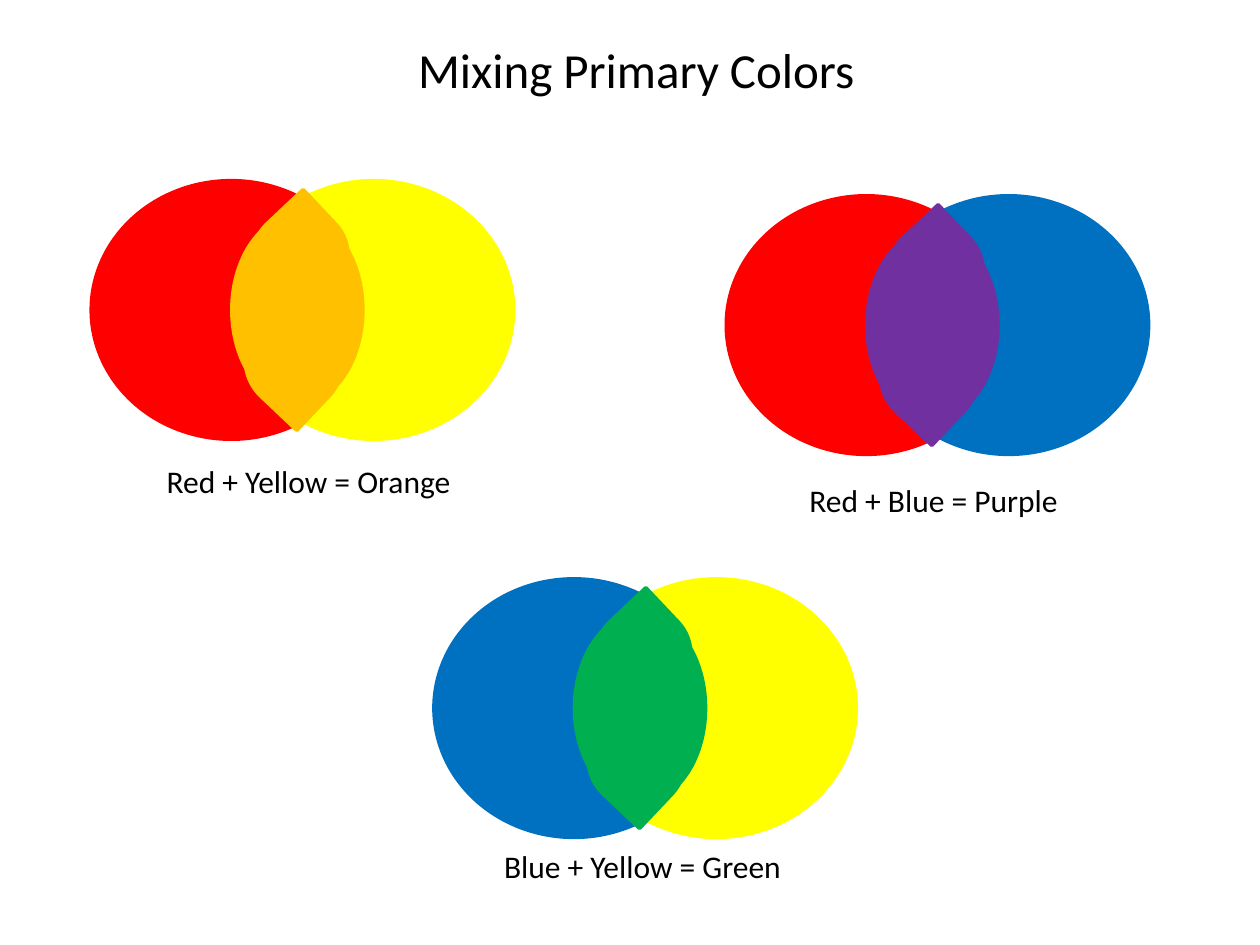
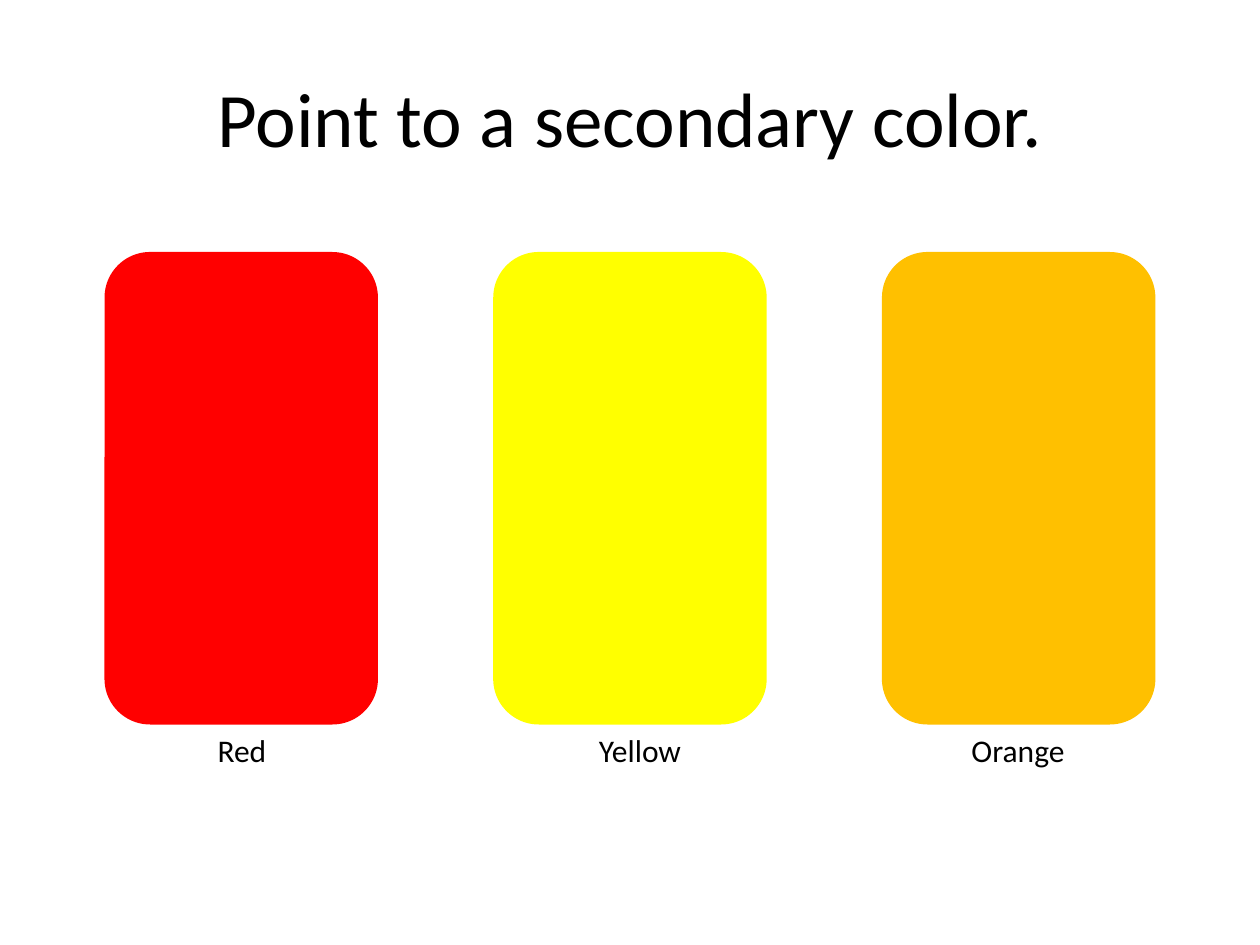
from pptx import Presentation
from pptx.dml.color import RGBColor
from pptx.enum.shapes import MSO_SHAPE
from pptx.enum.text import MSO_ANCHOR, MSO_AUTO_SIZE, PP_ALIGN
from pptx.util import Inches, Pt

FONT = "Calibri"
COLORS = {
    "Red": "FF0000",
    "Yellow": "FFFF00",
    "Blue": "0070C0",
    "Orange": "FFC000",
    "Purple": "7030A0",
    "Green": "00B050",
    "text": "000000",
}

MIX_TITLE = ("Mixing Primary Colors", (0.55, -0.08, 9, 1.25), 28)
MIXES = [
    {"colors": ("Red", "Yellow", "Orange"), "at": (0.71, 1.42), "label_at": (0.68, 3.62)},
    {"colors": ("Red", "Blue", "Purple"), "at": (5.75, 1.54), "label_at": (5.64, 3.77)},
    {"colors": ("Blue", "Yellow", "Green"), "at": (3.43, 4.58), "label_at": (3.33, 6.67)},
]
CIRCLE_SIZE = (2.25, 2.08)
CIRCLE_STEP = 1.13
OVERLAP_PARTS = [
    (MSO_SHAPE.TEAR, (1.28, 0.25, 0.78, 0.75), 316.6, False),
    (MSO_SHAPE.TEAR, (1.23, 1.08, 0.78, 0.75), 43.4, True),
    (MSO_SHAPE.OVAL, (1.13, 0.29, 1.04, 1.5), 0, False),
]
MIX_LABEL_SIZE = (3.54, 0.4)

QUIZ_TITLE = ("Point to a secondary color.", (0.5, 0.3, 9, 1.25), 44)
CHOICES = [("Red", 0.92), ("Yellow", 4.08), ("Orange", 7.08)]
CARD_LEFT, CARD_TOP = 0.83, 2
CARD_SIZE = (2.17, 3.75)
CARD_STEP = 3.085
CHOICE_LABEL_SIZE = (2, 0.4)


def inches(box):
    return [Inches(value) for value in box]


def rgb(name):
    return RGBColor.from_string(COLORS[name])


def write(tf, text, size):
    tf.text = text
    p = tf.paragraphs[0]
    p.alignment = PP_ALIGN.CENTER
    font = p.runs[0].font
    font.name, font.size = FONT, Pt(size)
    font.color.rgb = rgb("text")


def add_titled_slide(prs, title, box, size):
    s = prs.slides.add_slide(prs.slide_layouts[5])
    sp = s.shapes.title
    sp.left, sp.top, sp.width, sp.height = inches(box)
    write(sp.text_frame, title, size)
    sp.text_frame.vertical_anchor = MSO_ANCHOR.MIDDLE
    return s


def add_filled(shapes, kind, box, color, outline=0):
    sp = shapes.add_shape(kind, *inches(box))
    sp.shadow.inherit = False
    sp.fill.solid()
    sp.fill.fore_color.rgb = rgb(color)
    if outline:
        sp.line.color.rgb = rgb(color)
        sp.line.width = Pt(outline)
    else:
        sp.line.fill.background()
    return sp


def add_label(shapes, text, box):
    tf = shapes.add_textbox(*inches(box)).text_frame
    tf.word_wrap = True
    tf.auto_size = MSO_AUTO_SIZE.SHAPE_TO_FIT_TEXT
    write(tf, text, 18)


def add_mix(s, colors, at, label_at):
    left, top = at
    first, second, result = colors
    for i, color in enumerate((first, second)):
        add_filled(s.shapes, MSO_SHAPE.OVAL, (left + i * CIRCLE_STEP, top, *CIRCLE_SIZE), color)
    overlap = s.shapes.add_group_shape().shapes
    for kind, (dx, dy, width, height), rotation, flipped in OVERLAP_PARTS:
        sp = add_filled(overlap, kind, (left + dx, top + dy, width, height), result, 2)
        sp.rotation = rotation
        if flipped:
            sp.element.spPr.get_or_add_xfrm().set("flipV", "1")
    add_label(s.shapes, f"{first} + {second} = {result}", (*label_at, *MIX_LABEL_SIZE))


def add_choice(s, index, name, label_left):
    card = s.shapes.add_group_shape().shapes
    left = CARD_LEFT + index * CARD_STEP
    add_filled(card, MSO_SHAPE.ROUNDED_RECTANGLE, (left, CARD_TOP, *CARD_SIZE), name)
    add_label(card, name, (label_left, CARD_TOP + CARD_SIZE[1], *CHOICE_LABEL_SIZE))


def main():
    prs = Presentation()
    prs.slide_width, prs.slide_height = Inches(10), Inches(7.5)

    s = add_titled_slide(prs, *MIX_TITLE)
    for mix in MIXES:
        add_mix(s, **mix)

    s = add_titled_slide(prs, *QUIZ_TITLE)
    for index, (name, label_left) in enumerate(CHOICES):
        add_choice(s, index, name, label_left)

    prs.save("out.pptx")


if __name__ == "__main__":
    main()
